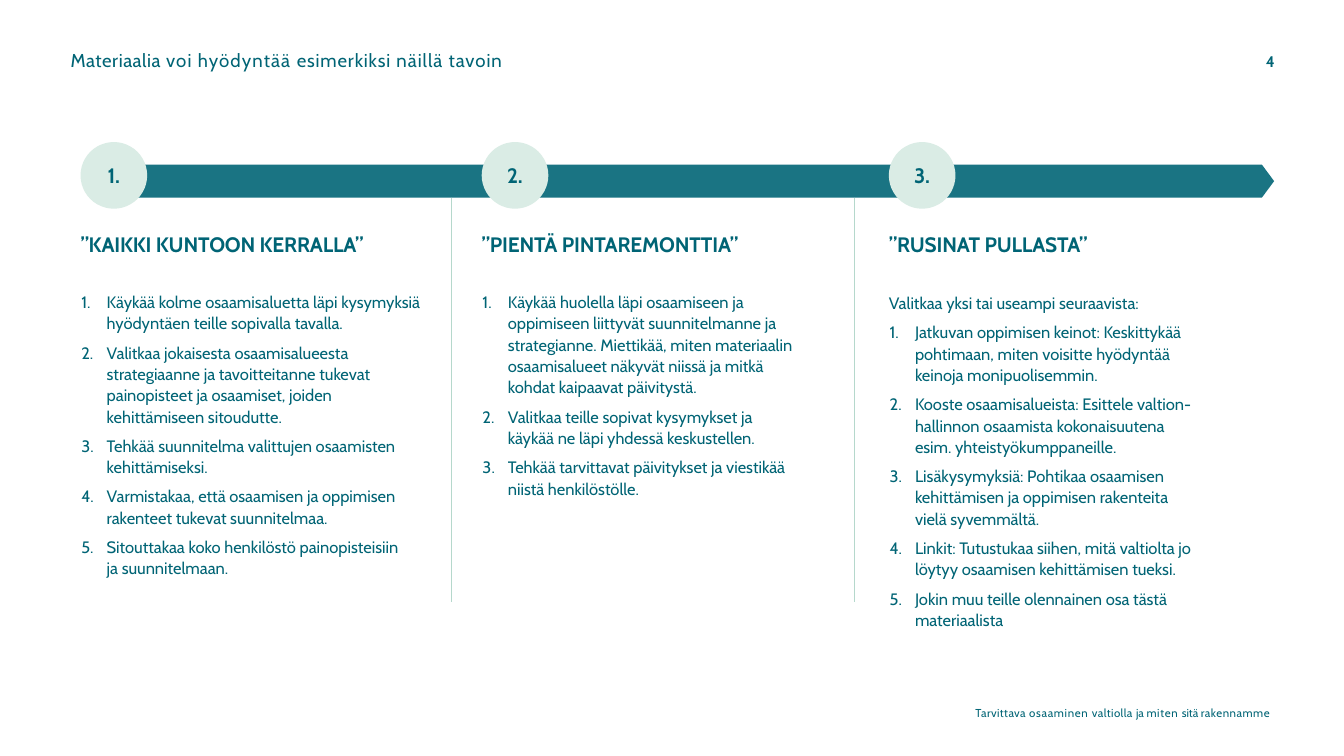
from lxml import etree
from pptx import Presentation
from pptx.dml.color import RGBColor
from pptx.enum.shapes import MSO_CONNECTOR, MSO_SHAPE
from pptx.enum.text import MSO_ANCHOR, PP_ALIGN
from pptx.oxml.ns import qn
from pptx.util import Cm, Pt

TEAL = RGBColor(0x00, 0x64, 0x75)
BAR = RGBColor(0x1A, 0x74, 0x83)
MINT = RGBColor(0xDA, 0xEC, 0xE5)
DIVIDER = RGBColor(0xB5, 0xD8, 0xCC)
FONT = "Cabin"
LEFT, CENTER, RIGHT = PP_ALIGN.LEFT, PP_ALIGN.CENTER, PP_ALIGN.RIGHT
TOP, MIDDLE = MSO_ANCHOR.TOP, MSO_ANCHOR.MIDDLE
OVAL, PENTAGON = MSO_SHAPE.OVAL, MSO_SHAPE.PENTAGON
STRAIGHT = MSO_CONNECTOR.STRAIGHT

HEADING_SIZE, BODY_SIZE = 14.9, 11.8
CIRCLE_TOP, CIRCLE_SIZE = 3.58, 1.68
COLUMN_TOP = 5.82

# number, left, width, height, heading, introduction, numbered items
COLUMNS = [
    ("1.", 2.03, 8.99, 10.01, "”KAIKKI KUNTOON KERRALLA”", None, [
        "Käykää kolme osaamisaluetta läpi kysymyksiä hyödyntäen teille sopivalla tavalla.",
        "Valitkaa jokaisesta osaamisalueesta strategiaanne ja tavoitteitanne tukevat "
        "painopisteet ja osaamiset, joiden\nkehittämiseen sitoudutte.",
        "Tehkää suunnitelma valittujen osaamisten kehittämiseksi.",
        "Varmistakaa, että osaamisen ja oppimisen rakenteet tukevat suunnitelmaa.",
        "Sitouttakaa koko henkilöstö painopisteisiin\nja suunnitelmaan.",
    ]),
    ("2.", 12.14, 8.43, 7.87, "”PIENTÄ PINTAREMONTTIA”", None, [
        "Käykää huolella läpi osaamiseen ja oppimiseen liittyvät suunnitelmanne ja "
        "strategianne. Miettikää, miten materiaalin osaamisalueet näkyvät niissä ja mitkä\n"
        "kohdat kaipaavat päivitystä.",
        "Valitkaa teille sopivat kysymykset ja\nkäykää ne läpi yhdessä keskustellen.",
        "Tehkää tarvittavat päivitykset ja viestikää niistä henkilöstölle.",
    ]),
    ("3.", 22.4, 8, 11.02, "”RUSINAT PULLASTA”", "Valitkaa yksi tai useampi seuraavista:", [
        "Jatkuvan oppimisen keinot: Keskittykää pohtimaan, miten voisitte hyödyntää "
        "keinoja monipuolisemmin.",
        "Kooste osaamisalueista: Esittele valtion-hallinnon osaamista kokonaisuutena\n"
        "esim. yhteistyökumppaneille.",
        "Lisäkysymyksiä: Pohtikaa osaamisen kehittämisen ja oppimisen rakenteita\n"
        "vielä syvemmältä.",
        "Linkit: Tutustukaa siihen, mitä valtiolta jo löytyy osaamisen kehittämisen tueksi.",
        "Jokin muu teille olennainen osa tästä materiaalista",
    ]),
]


def add_run(p, text, size, bold=False, spacing=0):
    """Add text in the slide's font; a newline becomes a line break."""
    for i, line in enumerate(text.split("\n")):
        if i:
            p.add_line_break()
        r = p.add_run()
        r.text = line
        r.font.name = FONT
        r.font.size = Pt(size)
        r.font.bold = bold
        r.font.color.rgb = TEAL
        if spacing:
            r._r.get_or_add_rPr().set("spc", str(round(spacing * 100)))


def set_frame(sp, anchor, align):
    """Remove the margins and return the first paragraph."""
    tf = sp.text_frame
    tf.margin_left = tf.margin_top = tf.margin_right = tf.margin_bottom = 0
    tf.word_wrap = True
    tf.vertical_anchor = anchor
    tf.paragraphs[0].alignment = align
    return tf.paragraphs[0]


prs = Presentation()
prs.slide_width, prs.slide_height = Cm(33.87), Cm(19.05)
s = prs.slides.add_slide(prs.slide_layouts[6])

# Title, page number and footer: box, anchor, alignment, size, bold, runs with spacing
LABELS = [
    ((1.78, 1.24, 15.95, 0.56), MIDDLE, LEFT, 13.3, False, [
        ("Materiaalia ", 0.4), ("voi hyödyntää ", 0.8),
        ("esimerkiksi ", 0.6), ("näillä tavoin", 0.7)]),
    ((30.99, 1.32, 1.14, 1.02), TOP, RIGHT, 11, True, [("4", 0)]),
    ((23.19, 17.8, 8.81, 0.36), TOP, RIGHT, 8.2, False, [
        ("Tarvittava ", 0.3), ("osaaminen ", 0.5), ("valtiolla ", 0.3), ("ja ", 0),
        ("miten ", 0.5), ("sitä ", 0), ("rakennamme", 0.4)]),
]
for box, anchor, align, size, bold, runs in LABELS:
    sp = s.shapes.add_textbox(*map(Cm, box))
    p = set_frame(sp, anchor, align)
    for text, spacing in runs:
        add_run(p, text, size, bold, spacing)

# Timeline arrow
bar = s.shapes.add_shape(PENTAGON, Cm(2.39), Cm(4.15), Cm(29.72), Cm(0.83))
bar.adjustments[0] = 0.37
bar.shadow.inherit = False
bar.fill.solid()
bar.fill.fore_color.rgb = BAR
bar.line.fill.background()

# Numbered circles and columns of text
for number, left, width, height, heading, intro, items in COLUMNS:
    circle = s.shapes.add_shape(OVAL, Cm(left), Cm(CIRCLE_TOP), Cm(CIRCLE_SIZE), Cm(CIRCLE_SIZE))
    circle.shadow.inherit = False
    circle.fill.solid()
    circle.fill.fore_color.rgb = MINT
    circle.line.fill.background()
    add_run(set_frame(circle, MIDDLE, CENTER), number, HEADING_SIZE, True, -0.1)

    column = s.shapes.add_textbox(Cm(left), Cm(COLUMN_TOP), Cm(width), Cm(height))
    p = set_frame(column, TOP, LEFT)
    p.line_spacing = 1.01
    add_run(p, heading, HEADING_SIZE, True, -0.1)

    paragraphs = [(text, True) for text in items]
    if intro:
        paragraphs.insert(0, (intro, False))
    for i, (text, numbered) in enumerate(paragraphs):
        p = column.text_frame.add_paragraph()
        p.line_spacing = 1.08 if numbered else 1.13
        p.space_before = Pt(5.6 if i else 24.5)
        if numbered:
            pPr = p._p.get_or_add_pPr()
            pPr.set("marL", str(Cm(0.66)))
            pPr.set("indent", str(Cm(-0.64)))
            etree.SubElement(pPr, qn("a:buAutoNum"), type="arabicPeriod")
        add_run(p, text, BODY_SIZE)

# Dividers between the columns
for x in (11.38, 21.54):
    divider = s.shapes.add_connector(STRAIGHT, Cm(x), Cm(4.98), Cm(x), Cm(15.16))
    divider.line.color.rgb = DIVIDER
    divider.line.width = Pt(0.62)
    etree.SubElement(divider._element.spPr, qn("a:effectLst"))

prs.save("out.pptx")
